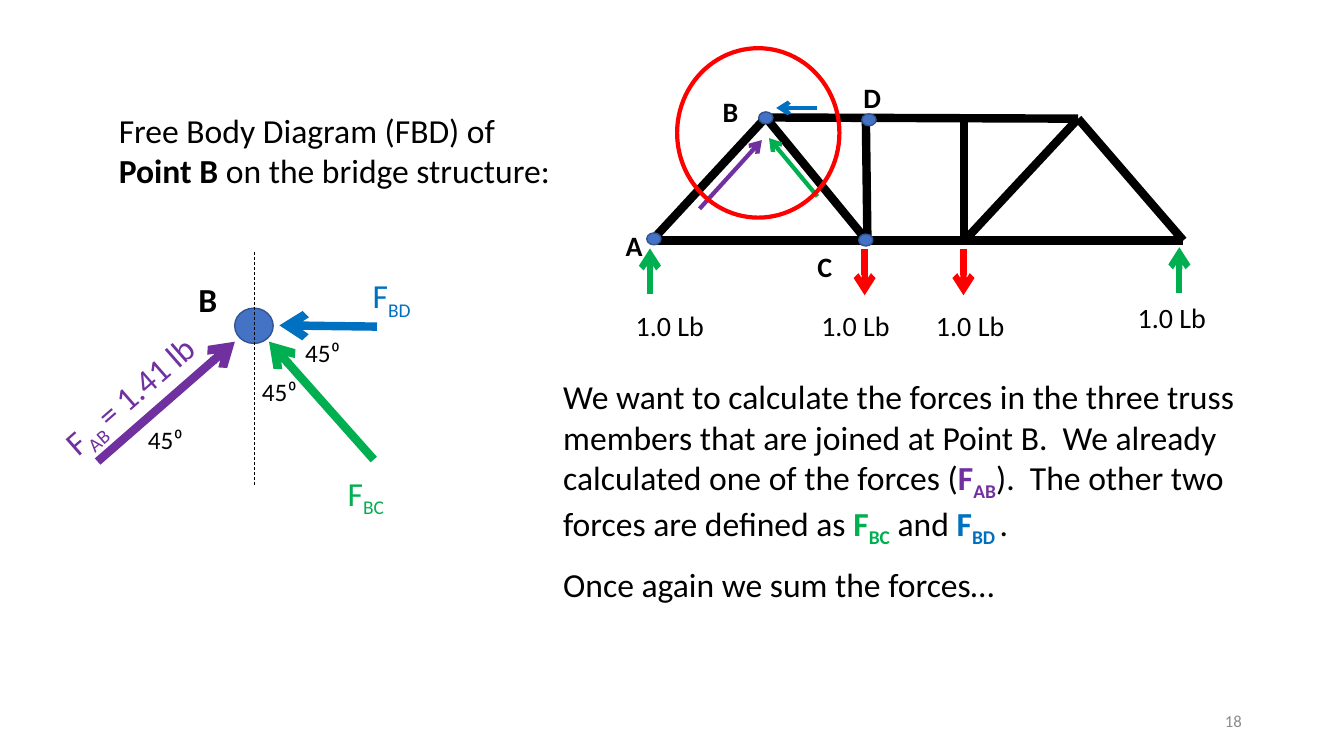
from dataclasses import dataclass

from lxml.etree import SubElement
from pptx import Presentation
from pptx.dml.color import RGBColor
from pptx.enum.dml import MSO_LINE
from pptx.enum.shapes import MSO_CONNECTOR, MSO_SHAPE
from pptx.enum.text import MSO_ANCHOR, MSO_AUTO_SIZE, PP_ALIGN
from pptx.oxml.ns import qn
from pptx.util import Cm, Pt

BLACK, GREY, RED = "000000", "8C8C8C", "FF0000"
GREEN, BLUE, PURPLE = "00B050", "0070C0", "7030A0"
DOT_FILL, DOT_EDGE = "4472C4", "325491"


@dataclass
class Run:
    text: str
    color: str = BLACK
    bold: bool = False
    sub: bool = False


@dataclass
class Label:
    runs: list[Run]
    x: float
    y: float
    w: float
    h: float
    size: float
    align: PP_ALIGN = PP_ALIGN.LEFT
    wrap: bool = True
    rotation: float = 0
    anchor: MSO_ANCHOR = MSO_ANCHOR.TOP


@dataclass
class Line:
    start: tuple[float, float]
    end: tuple[float, float]
    color: str
    width: float
    arrow: bool = True
    dashed: bool = False


@dataclass
class Oval:
    cx: float
    cy: float
    w: float
    h: float
    edge: str = DOT_EDGE
    width: float = 1
    fill: str | None = DOT_FILL


def rgb(color: str) -> RGBColor:
    return RGBColor.from_string(color)


def write_paragraph(p, runs: list[Run], size: float, align: PP_ALIGN) -> None:
    p.alignment = align
    p.space_before = Pt(0)
    for run in runs:
        r = p.add_run()
        r.text = run.text
        r.font.name = "Calibri"
        r.font.size = Pt(size)
        r.font.bold = run.bold
        r.font.color.rgb = rgb(run.color)
        if run.sub:
            r.font._element.set("baseline", "-25000")


def place(sp, x: float, y: float, w: float, h: float) -> None:
    sp.left, sp.top, sp.width, sp.height = Cm(x), Cm(y), Cm(w), Cm(h)
    tf = sp.text_frame
    tf.word_wrap = True
    tf.auto_size = MSO_AUTO_SIZE.NONE
    tf.vertical_anchor = MSO_ANCHOR.TOP


def draw_label(s, label: Label) -> None:
    sp = s.shapes.add_textbox(0, 0, 0, 0)
    place(sp, label.x, label.y, label.w, label.h)
    sp.rotation = label.rotation
    sp.text_frame.word_wrap = label.wrap
    sp.text_frame.vertical_anchor = label.anchor
    write_paragraph(sp.text_frame.paragraphs[0], label.runs, label.size, label.align)


def draw_line(s, line: Line) -> None:
    ends = [Cm(v) for v in (*line.start, *line.end)]
    sp = s.shapes.add_connector(MSO_CONNECTOR.STRAIGHT, *ends)
    sp.line.color.rgb = rgb(line.color)
    sp.line.width = Pt(line.width)
    if line.dashed:
        sp.line.dash_style = MSO_LINE.DASH
    if line.arrow:
        SubElement(sp.line._get_or_add_ln(), qn("a:tailEnd"), type="arrow")
    SubElement(sp._element.spPr, qn("a:effectLst"))


def draw_oval(s, oval: Oval) -> None:
    sp = s.shapes.add_shape(MSO_SHAPE.OVAL, Cm(oval.cx - oval.w / 2), Cm(oval.cy - oval.h / 2),
                            Cm(oval.w), Cm(oval.h))
    sp.shadow.inherit = False
    sp.line.color.rgb = rgb(oval.edge)
    sp.line.width = Pt(oval.width)
    if oval.fill:
        sp.fill.solid()
        sp.fill.fore_color.rgb = rgb(oval.fill)
    else:
        sp.fill.background()


def force(name: str, color: str, bold: bool = False) -> list[Run]:
    return [Run("F", color, bold), Run(name, color, bold, sub=True)]


NODES = {
    "A": (16.43, 6.06), "B": (19.3, 2.96), "C": (21.86, 6.08), "D": (21.82, 2.95),
    "E": (24.29, 2.95), "F": (27.17, 2.99), "G": (29.82, 6.06), "H": (24.29, 6.08),
}
MEMBERS = ["DC", "AG", "BF", "AB", "HF", "CB", "GF", "EH"]
TITLE = [Run("Free Body Diagram (FBD) of "), Run("Point B", bold=True),
         Run(" on the bridge structure:")]
BODY = [
    [Run("We want to calculate the forces in the three truss members that are joined at "
         "Point B.  We already calculated one of the forces ("),
     *force("AB", PURPLE, True), Run(").  The other two forces are defined as "),
     *force("BC", GREEN, True), Run(" and "), *force("BD ", BLUE, True), Run(".")],
    [Run("Once again we sum the forces…")],
]

TRUSS = [Line(NODES[a], NODES[b], BLACK, 6, arrow=False) for a, b in MEMBERS]
LOADS = [Line((x, 6.27), (x, 7.44), RED, 4.5) for x in (21.79, 24.28)]
SUPPORTS = [Line((x, y), (x, y - 1.16), GREEN, 4.5) for x, y in ((16.38, 7.42), (29.72, 7.39))]
FORCES = [
    Line((20.6, 2.72), (19.56, 2.72), BLUE, 3),
    Line((17.63, 5.26), (19.2, 3.53), PURPLE, 3),
    Line((20.6, 4.95), (19.38, 3.48), GREEN, 3),
    Line((2.46, 11.63), (5.92, 8.61), PURPLE, 6),
    Line((9.5, 8.23), (7.04, 8.2), BLUE, 6),
    Line((9.42, 11.58), (6.78, 8.61), GREEN, 6),
]
AXIS = Line((6.4, 6.35), (6.4, 12.27), BLACK, 0.5, arrow=False, dashed=True)
JOINTS = [Oval(x, y, 0.36, 0.3)
          for x, y in ((16.48, 6.02), (19.3, 2.97), (21.82, 6.05), (21.9, 3.02))]
POINT_B = Oval(6.4, 8.21, 0.97, 0.89)
HIGHLIGHT = Oval(19.11, 3.35, 4.09, 4.27, RED, 3, None)

LABELS = [
    *[Label([Run("1.0 Lb ")], x, y, 2.58, 1.12, 20, PP_ALIGN.CENTER)
      for x, y in ((15.67, 7.65), (20.35, 7.65), (23.24, 7.65), (28.32, 7.44))],
    *[Label([Run(name, bold=True)], x, y, 0.86, 1.12, 20)
      for name, x, y in (("A", 15.52, 5.64), ("B", 17.96, 2.26),
                         ("C", 20.35, 6.15), ("D", 21.51, 1.91))],
    *[Label([Run("45⁰")], x, y, 1.63, 1.02, 18)
      for x, y in ((3.48, 10.57), (6.35, 9.35), (7.44, 8.38))],
    Label([*force("AB ", PURPLE), Run("= 1.41 lb", PURPLE)],
          0.97, 9.22, 4.78, 1.27, 24, wrap=False, rotation=318.9),
    Label(force("BD", BLUE), 9.14, 6.81, 1.88, 1.27, 24, wrap=False),
    Label(force("BC", GREEN), 8.51, 11.79, 1.83, 1.27, 24, wrap=False),
    Label([Run("B", bold=True)], 4.75, 6.91, 1.22, 1.27, 24),
    Label([Run("18", GREY)], 23.93, 17.65, 7.62, 1.02, 12, PP_ALIGN.RIGHT,
          anchor=MSO_ANCHOR.MIDDLE),
]


def main() -> None:
    prs = Presentation()
    prs.slide_width, prs.slide_height = Cm(33.87), Cm(19.05)
    s = prs.slides.add_slide(prs.slide_layouts[1])

    title, body = s.shapes.title, s.placeholders[1]
    place(title, 2.74, 2.64, 11.79, 2.31)
    write_paragraph(title.text_frame.paragraphs[0], TITLE, 24, PP_ALIGN.LEFT)
    place(body, 13.94, 9.35, 18.01, 6.05)
    tf = body.text_frame
    for p, runs in zip((tf.paragraphs[0], tf.add_paragraph()), BODY):
        write_paragraph(p, runs, 24, PP_ALIGN.LEFT)
        p.space_after = Pt(11)
        pPr = p._p.get_or_add_pPr()
        pPr.set("marL", "0")
        pPr.set("indent", "0")
        SubElement(pPr, qn("a:buNone"))

    for line in [*TRUSS, *LOADS, *SUPPORTS]:
        draw_line(s, line)
    for oval in [*JOINTS, POINT_B]:
        draw_oval(s, oval)
    for line in [*FORCES, AXIS]:
        draw_line(s, line)
    for label in LABELS:
        draw_label(s, label)
    draw_oval(s, HIGHLIGHT)
    prs.save("out.pptx")


if __name__ == "__main__":
    main()
